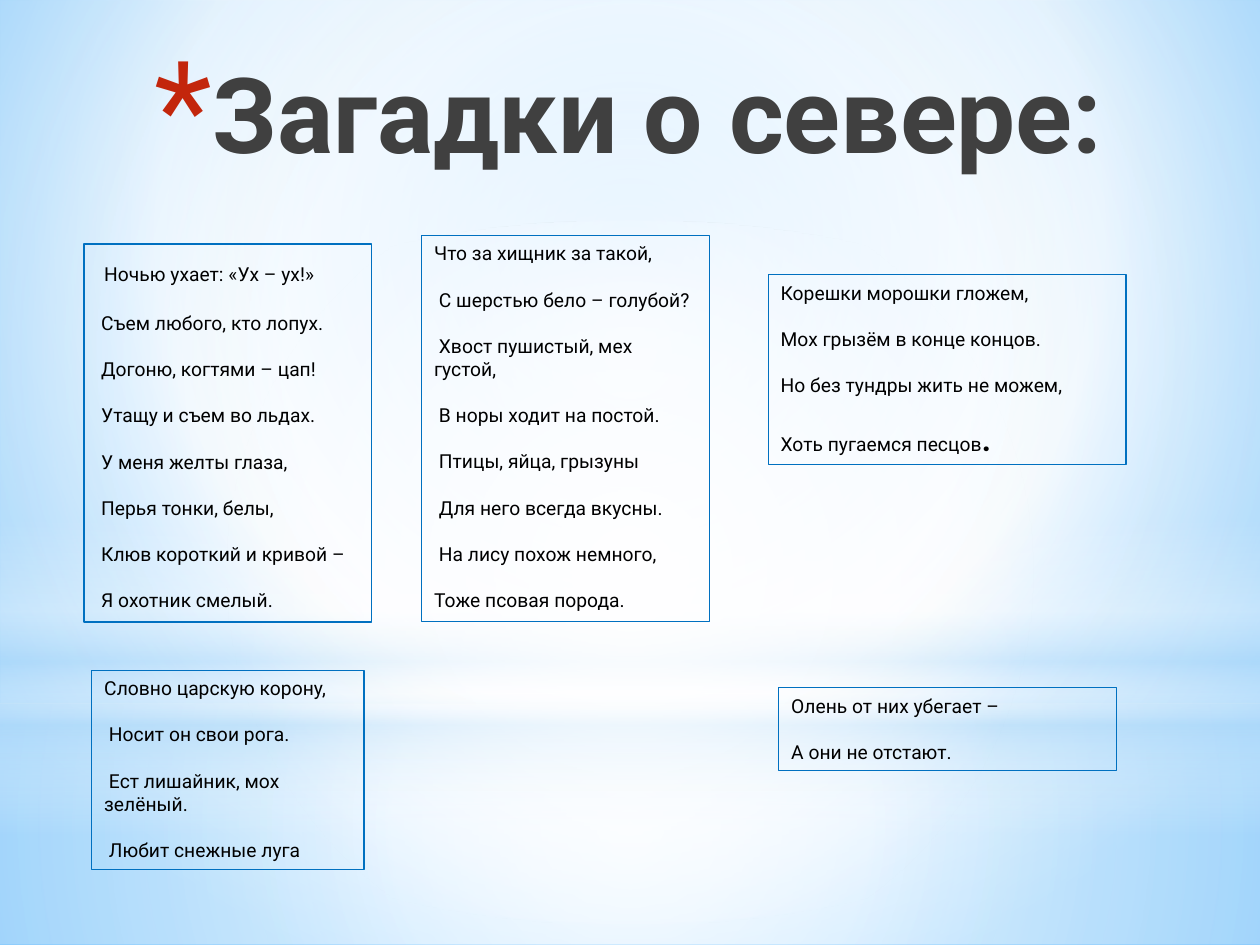
from lxml.etree import SubElement
from pptx import Presentation
from pptx.dml.color import RGBColor
from pptx.enum.shapes import MSO_SHAPE
from pptx.enum.text import MSO_ANCHOR, MSO_AUTO_SIZE, PP_ALIGN
from pptx.oxml import parse_xml
from pptx.oxml.ns import nsdecls, qn
from pptx.util import Pt

FONT = "Roboto"
HEX = {
    "white": "FFFFFF", "pale": "B4DCFA", "sky": "9ED5FF", "deep": "5BB9FF",
    "title": "404040", "star": "C3260C", "text": "000000", "line": "0070C0",
}
MID = (50, 50, 50, 50)
BACK = [(0, "sky", 100), (60, "white", 100), (100, "deep", 100)]
GLOWS = [
    (MSO_SHAPE.RECTANGLE, (0, 402, 720, 138),
     [(0, "white", 91), (37, "white", 76), (100, "pale", 79)], MID),
    (MSO_SHAPE.RECTANGLE, (0, 0, 720, 402),
     [(0, "white", 89), (48, "white", 62), (100, "pale", 79)], MID),
    (MSO_SHAPE.RECTANGLE, (0, 297, 720, 180),
     [(0, "white", 0), (29, "white", 30), (45, "pale", 40),
      (55, "white", 26), (65, "pale", 60), (100, "white", 0)], None),
    (MSO_SHAPE.OVAL, (0, 126, 720, 402),
     [(0, "white", 100), (56, "white", 0)], MID),
]
OWL = [
    " Ночью ухает: «Ух – ух!»", " Съем любого, кто лопух.",
    " Догоню, когтями – цап!", " Утащу и съем во льдах.",
    " У меня желты глаза,", " Перья тонки, белы,",
    " Клюв короткий и кривой –", " Я охотник смелый.",
]
FOX = [
    "Что за хищник за такой,", " С шерстью бело – голубой?",
    " Хвост пушистый, мех густой,", " В норы ходит на постой.",
    " Птицы, яйца, грызуны", " Для него всегда вкусны.",
    " На лису похож немного,", "Тоже псовая порода.",
]
MICE = [
    "Корешки морошки гложем,", "Мох грызём в конце концов.",
    "Но без тундры жить не можем,", "Хоть пугаемся песцов",
]
DEER = [
    "Словно царскую корону,", " Носит он свои рога.",
    " Ест лишайник, мох зелёный.", " Любит снежные луга",
]
WOLVES = ["Олень от них убегает –", "А они не отстают."]


def paint(root, stops, focus):
    gs = "".join(
        f'<a:gs pos="{pos * 1000}"><a:srgbClr val="{HEX[name]}">'
        f'<a:alpha val="{alpha * 1000}"/></a:srgbClr></a:gs>'
        for pos, name, alpha in stops)
    if focus:
        sides = " ".join(f'{s}="{v * 1000}"' for s, v in zip("ltrb", focus))
        way = f'<a:path path="circle"><a:fillToRect {sides}/></a:path>'
    else:
        way = '<a:lin ang="5400000" scaled="0"/>'
    old = root.find(".//" + qn("a:solidFill"))
    old.getparent().replace(old, parse_xml(
        f'<a:gradFill {nsdecls("a")} rotWithShape="1">'
        f'<a:gsLst>{gs}</a:gsLst>{way}</a:gradFill>'))


def style(run, size, name, bold=False):
    run.font.name = FONT
    run.font.size = Pt(size)
    run.font.bold = bold
    run.font.color.rgb = RGBColor.from_string(HEX[name])


def add_glow(slide, kind, area, stops, focus):
    shape = slide.shapes.add_shape(kind, *map(Pt, area))
    shape.shadow.inherit = False
    shape.line.fill.background()
    shape.fill.solid()
    paint(shape._element, stops, focus)


def add_star(para):
    props = para._p.get_or_add_pPr()
    props.set("marL", str(Pt(25)))
    props.set("indent", str(-Pt(25)))
    color = SubElement(props, qn("a:buClr"))
    SubElement(color, qn("a:srgbClr"), val=HEX["star"])
    SubElement(props, qn("a:buSzPct"), val="128000")
    SubElement(props, qn("a:buFont"), typeface=FONT)
    SubElement(props, qn("a:buChar"), char="*")


def set_title(slide, text):
    title = slide.shapes.title
    title.left, title.top, title.width, title.height = map(
        Pt, (52.5, 21, 613.5, 85))
    frame = title.text_frame
    frame.text = text
    frame.auto_size = MSO_AUTO_SIZE.NONE
    frame.vertical_anchor = MSO_ANCHOR.MIDDLE
    para = frame.paragraphs[0]
    para.alignment = PP_ALIGN.CENTER
    add_star(para)
    style(para.runs[0], 60, "title", True)
    slide.shapes._spTree.append(title._element)


def add_verse(slide, area, lines):
    box = slide.shapes.add_shape(MSO_SHAPE.RECTANGLE, *map(Pt, area))
    box.shadow.inherit = False
    box.fill.background()
    box.line.color.rgb = RGBColor.from_string(HEX["line"])
    box.line.width = Pt(0.75)
    frame = box.text_frame
    frame.word_wrap = True
    frame.auto_size = MSO_AUTO_SIZE.SHAPE_TO_FIT_TEXT
    frame.vertical_anchor = MSO_ANCHOR.TOP
    frame.text = "\n".join(lines)
    for i, para in enumerate(frame.paragraphs):
        para.alignment = PP_ALIGN.LEFT
        para.space_before = Pt(13.2 if i else 0)
        style(para.runs[0], 11, "text")
    return frame.paragraphs


def main():
    prs = Presentation()
    prs.slide_width, prs.slide_height = Pt(720), Pt(540)
    slide = prs.slides.add_slide(prs.slide_layouts[5])
    slide.background.fill.solid()
    paint(slide._element, BACK, (20, 10, 20, 60))
    for glow in GLOWS:
        add_glow(slide, *glow)
    set_title(slide, "Загадки о севере:")

    first = add_verse(slide, (48, 139.5, 164.5, 216), OWL)[0]
    first.runs[0].text = " "
    first.runs[0].font.size = Pt(18)
    run = first.add_run()
    run.text = OWL[0].strip()
    style(run, 11, "text")

    add_verse(slide, (241, 134.5, 164.5, 220.5), FOX)
    last = add_verse(slide, (439, 157, 204.5, 108.5), MICE)[-1]
    dot = last.add_run()
    dot.text = "."
    style(dot, 18, "text", True)
    add_verse(slide, (52.5, 383, 155.5, 114), DEER)
    add_verse(slide, (445, 393, 193, 47.5), WOLVES)
    prs.save("out.pptx")


if __name__ == "__main__":
    main()
